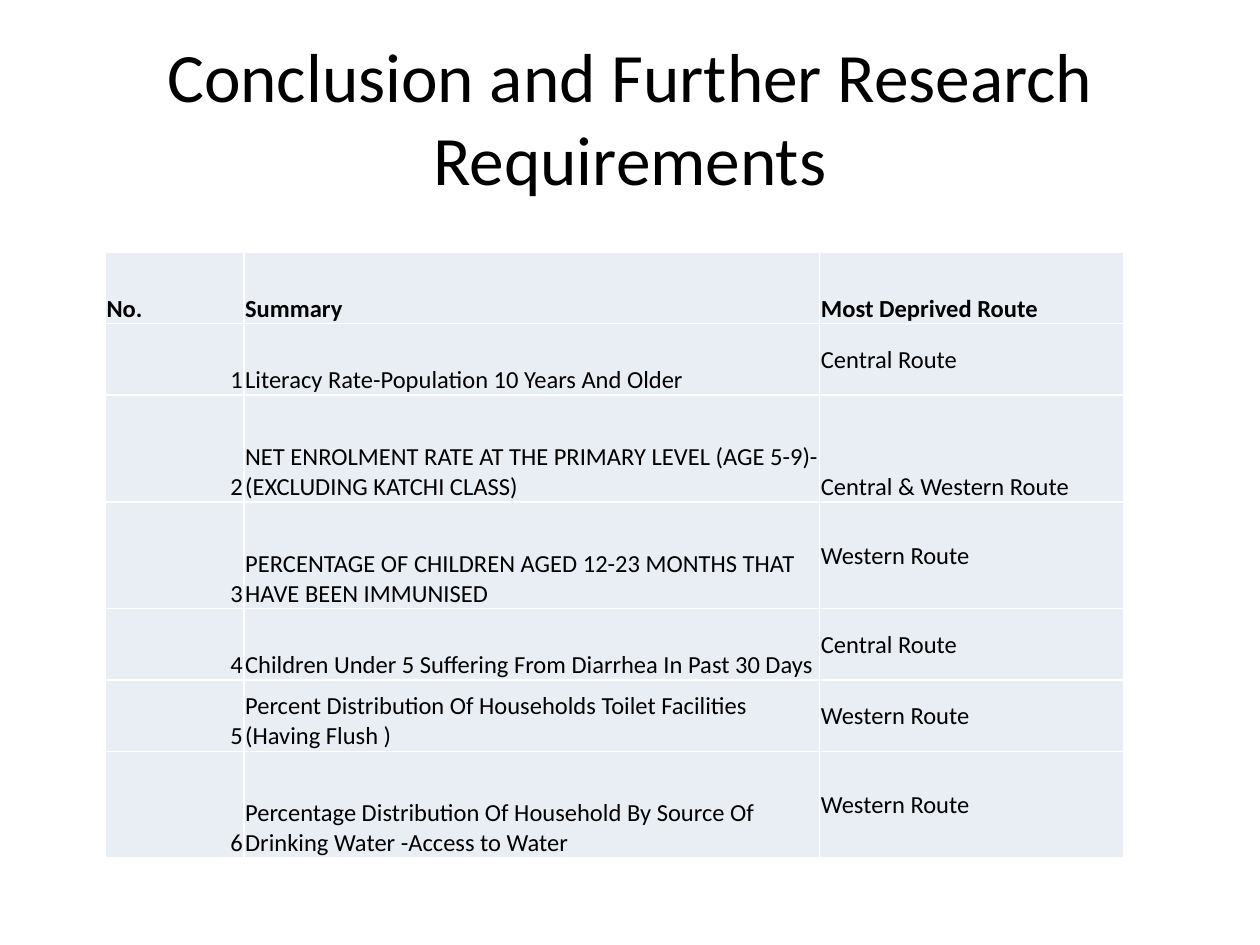
from dataclasses import dataclass

import pptx
import pptx.dml.color
import pptx.enum.text
import pptx.oxml
import pptx.oxml.ns
import pptx.util

Pt = pptx.util.Pt
Align = pptx.enum.text.PP_ALIGN
Anchor = pptx.enum.text.MSO_ANCHOR

FONT = "Calibri"
BLACK, WHITE, CELL_FILL = "000000", "FFFFFF", "E9EDF4"
SHORT_ROW, TALL_ROW = 40.8, 61
COLUMN_WIDTHS = (79.2, 329, 173.5)
HEADINGS = ("No.", "Summary", "Most Deprived Route")


@dataclass
class Finding:
    summary: str
    route: str
    height: float = SHORT_ROW
    route_anchor: Anchor = Anchor.MIDDLE


FINDINGS = [
    Finding("Literacy Rate-Population 10 Years And Older", "Central Route"),
    Finding("NET ENROLMENT RATE AT THE PRIMARY LEVEL (AGE 5-9)- (EXCLUDING KATCHI CLASS)",
            "Central & Western Route", TALL_ROW, Anchor.BOTTOM),
    Finding("PERCENTAGE OF CHILDREN AGED 12-23 MONTHS THAT HAVE BEEN IMMUNISED",
            "Western Route", TALL_ROW),
    Finding("Children Under 5 Suffering From Diarrhea In Past 30 Days", "Central Route"),
    Finding("Percent Distribution Of Households Toilet Facilities (Having Flush )",
            "Western Route"),
    Finding("Percentage Distribution Of Household By Source Of Drinking Water -Access to Water",
            "Western Route", TALL_ROW),
]


def color(value: str) -> pptx.dml.color.RGBColor:
    return pptx.dml.color.RGBColor.from_string(value)


def write(frame, text: str, *, size: float = 14, bold: bool = False,
          align: Align = Align.LEFT) -> None:
    para = frame.paragraphs[0]
    para.alignment = align
    span = para.add_run()
    span.text = text
    span.font.name = FONT
    span.font.size = Pt(size)
    span.font.bold = bold
    span.font.color.rgb = color(BLACK)


def add_borders(cell, line_color: str, width: float) -> None:
    """Put a solid line on all four sides; lines come before the cell fill."""
    properties = cell._tc.get_or_add_tcPr()
    for index, side in enumerate(("lnL", "lnR", "lnT", "lnB")):
        properties.insert(index, pptx.oxml.parse_xml(
            f'<a:{side} {pptx.oxml.ns.nsdecls("a")} w="{Pt(width)}"><a:solidFill>'
            f'<a:srgbClr val="{line_color}"/></a:solidFill></a:{side}>'))


def fill_cell(cell, text: str, *, anchor: Anchor = Anchor.BOTTOM, **style) -> None:
    cell.margin_left = cell.margin_right = cell.margin_top = Pt(0.7)
    cell.margin_bottom = Pt(0)
    cell.vertical_anchor = anchor
    cell.fill.solid()
    cell.fill.fore_color.rgb = color(CELL_FILL)
    add_borders(cell, WHITE, 1)
    write(cell.text_frame, text, **style)


def add_title(page, text: str) -> None:
    box = page.shapes.add_textbox(Pt(36), Pt(21.6), Pt(648), Pt(90))
    box.text_frame.word_wrap = True
    box.text_frame.vertical_anchor = Anchor.MIDDLE
    write(box.text_frame, text, size=39.6, align=Align.CENTER)


def add_findings_table(page, findings: list[Finding]) -> None:
    heights = [SHORT_ROW] + [finding.height for finding in findings]
    table = page.shapes.add_table(
        len(heights), len(COLUMN_WIDTHS), Pt(60.2), Pt(144.2),
        Pt(sum(COLUMN_WIDTHS)), Pt(sum(heights))).table
    table.first_row = table.horz_banding = False
    for column, width in zip(table.columns, COLUMN_WIDTHS):
        column.width = Pt(width)
    for row, height in zip(table.rows, heights):
        row.height = Pt(height)

    # Heading row
    for index, heading in enumerate(HEADINGS):
        fill_cell(table.cell(0, index), heading, bold=True)

    # Numbered findings
    for number, finding in enumerate(findings, start=1):
        fill_cell(table.cell(number, 0), str(number), align=Align.RIGHT)
        fill_cell(table.cell(number, 1), finding.summary)
        fill_cell(table.cell(number, 2), finding.route, anchor=finding.route_anchor)


def main() -> None:
    deck = pptx.Presentation()
    deck.slide_width, deck.slide_height = Pt(720), Pt(540)
    page = deck.slides.add_slide(deck.slide_layouts[6])
    add_title(page, "Conclusion and Further Research Requirements")
    add_findings_table(page, FINDINGS)
    deck.save("out.pptx")


if __name__ == "__main__":
    main()
